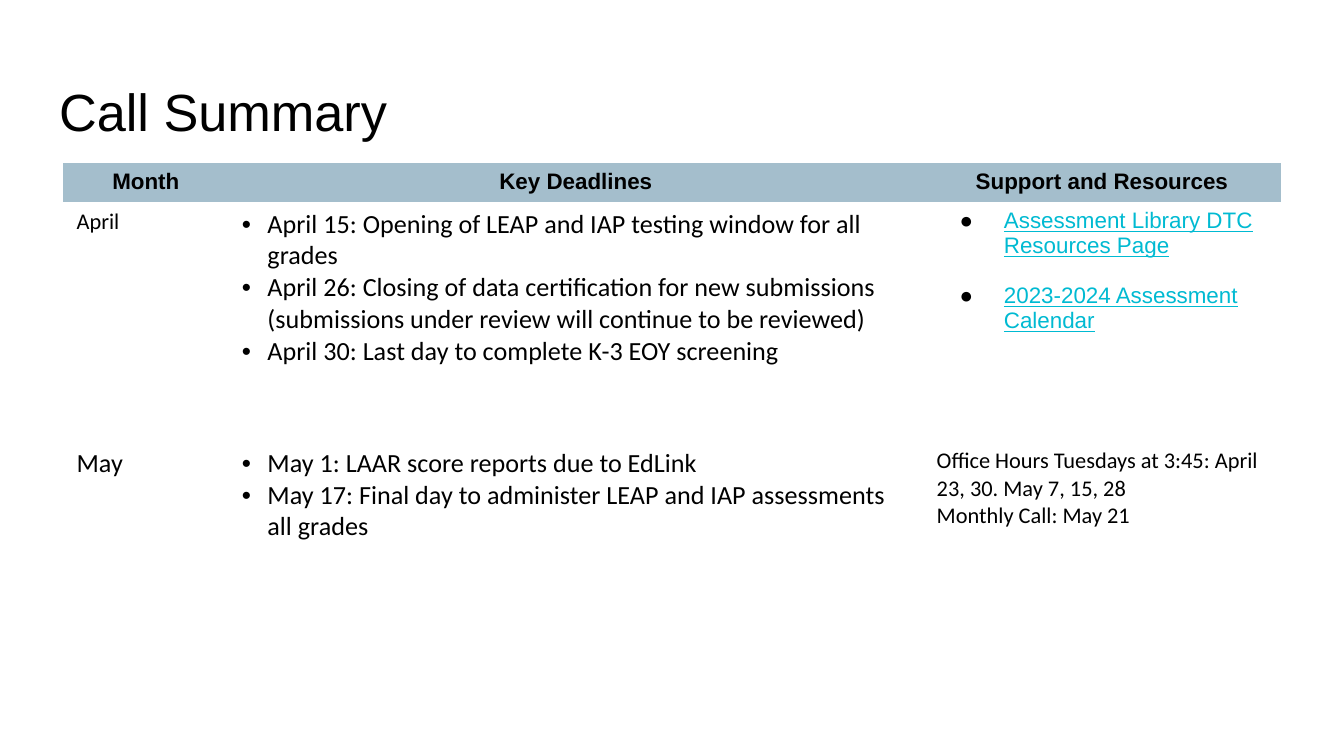
from dataclasses import dataclass

from lxml.etree import SubElement
from pptx import Presentation
from pptx.dml.color import RGBColor
from pptx.enum.text import MSO_ANCHOR, MSO_AUTO_SIZE, PP_ALIGN
from pptx.oxml.ns import qn
from pptx.util import Inches, Pt


@dataclass(frozen=True)
class Theme:
    ink: str = "000000"
    link: str = "00BAD2"
    header: str = "A4BECC"
    heading_font: str = "Arial"
    body_font: str = "Calibri"
    title_size: int = 28
    body_size: int = 14
    small_size: int = 12


THEME = Theme()
SLIDE_WIDTH = 10
SLIDE_HEIGHT = SLIDE_WIDTH * 9 / 16
NO_STYLE_NO_GRID = "{2D5ABB26-0587-4C30-8999-92F81FD0307C}"
COLUMN_WIDTHS = (1.23, 5.17, 2.66)
ROW_HEIGHTS = (0.29, 1.78, 1.35)

# Formats for the kinds of cell text
HEADER = dict(font=THEME.heading_font, size=THEME.small_size, bold=True,
              align=PP_ALIGN.CENTER)
SMALL = dict(size=THEME.small_size)
DEADLINES = dict(bullet="•", indent=0.19, hanging=0.19)
RESOURCES = dict(font=THEME.heading_font, size=THEME.small_size,
                 color=THEME.link, underline=True, bullet="●",
                 indent=0.5, hanging=0.33, gap=13.4)

HEADINGS = ("Month", "Key Deadlines", "Support and Resources")
MONTHS = (
    (
        (["April"], SMALL),
        (["April 15: Opening of LEAP and IAP testing window for all grades",
          "April 26: Closing of data certification for new submissions "
          "(submissions under review will continue to be reviewed)",
          "April 30: Last day to complete K-3 EOY screening"], DEADLINES),
        (["Assessment Library DTC Resources Page",
          "2023-2024 Assessment Calendar"], RESOURCES),
    ),
    (
        (["May"], {}),
        (["May 1: LAAR score reports due to EdLink",
          "May 17: Final day to administer LEAP and IAP assessments all grades"],
         DEADLINES),
        (["Office Hours Tuesdays at 3:45: April 23, 30. May 7, 15, 28",
          "Monthly Call: May 21"], SMALL),
    ),
)


def add_bullet(paragraph, mark, indent, hanging):
    properties = paragraph._p.get_or_add_pPr()
    properties.set("marL", str(Inches(indent)))
    properties.set("indent", str(-Inches(hanging)))
    bullet_color = SubElement(properties, qn("a:buClr"))
    SubElement(bullet_color, qn("a:srgbClr"), val=THEME.ink)
    SubElement(properties, qn("a:buFont"), typeface=THEME.heading_font)
    SubElement(properties, qn("a:buChar"), char=mark)


def write_text(frame, lines, *, font=THEME.body_font, size=THEME.body_size,
               color=THEME.ink, bold=False, underline=False,
               align=PP_ALIGN.LEFT, bullet=None, indent=0, hanging=0, gap=0):
    for number, line in enumerate(lines):
        paragraph = frame.add_paragraph() if number else frame.paragraphs[0]
        paragraph.alignment = align
        if number and gap:
            paragraph.space_before = Pt(gap)
        if bullet:
            add_bullet(paragraph, bullet, indent, hanging)
        run = paragraph.add_run()
        run.text = line
        run.font.name = font
        run.font.size = Pt(size)
        run.font.bold = bold
        run.font.underline = underline
        run.font.color.rgb = RGBColor.from_string(color)


def place_title(slide, text):
    title = slide.shapes.title
    title.left, title.top = Inches(0.34), Inches(0.49)
    title.width, title.height = Inches(9.32), Inches(0.63)
    frame = title.text_frame
    frame.margin_left = frame.margin_right = Inches(0.1)
    frame.margin_top = frame.margin_bottom = Inches(0.1)
    frame.vertical_anchor = MSO_ANCHOR.TOP
    frame.auto_size = MSO_AUTO_SIZE.NONE
    write_text(frame, [text], font=THEME.heading_font, size=THEME.title_size)


def add_schedule(slide):
    schedule = slide.shapes.add_table(
        len(ROW_HEIGHTS), len(COLUMN_WIDTHS), Inches(0.47), Inches(1.21),
        Inches(sum(COLUMN_WIDTHS)), Inches(sum(ROW_HEIGHTS))).table
    schedule._tbl.tblPr.find(qn("a:tableStyleId")).text = NO_STYLE_NO_GRID
    schedule.horz_banding = False
    for column, width in zip(schedule.columns, COLUMN_WIDTHS):
        column.width = Inches(width)
    for row, height in zip(schedule.rows, ROW_HEIGHTS):
        row.height = Inches(height)

    # Header row
    for column, heading in enumerate(HEADINGS):
        cell = schedule.cell(0, column)
        cell.fill.solid()
        cell.fill.fore_color.rgb = RGBColor.from_string(THEME.header)
        write_text(cell.text_frame, [heading], **HEADER)

    # One row for each month
    for row, month in enumerate(MONTHS, start=1):
        for column, (lines, text_format) in enumerate(month):
            cell = schedule.cell(row, column)
            cell.fill.background()
            write_text(cell.text_frame, lines, **text_format)


def main():
    deck = Presentation()
    deck.slide_width = Inches(SLIDE_WIDTH)
    deck.slide_height = Inches(SLIDE_HEIGHT)
    slide = deck.slides.add_slide(deck.slide_layouts.get_by_name("Title Only"))
    place_title(slide, "Call Summary")
    add_schedule(slide)
    deck.save("out.pptx")


if __name__ == "__main__":
    main()
